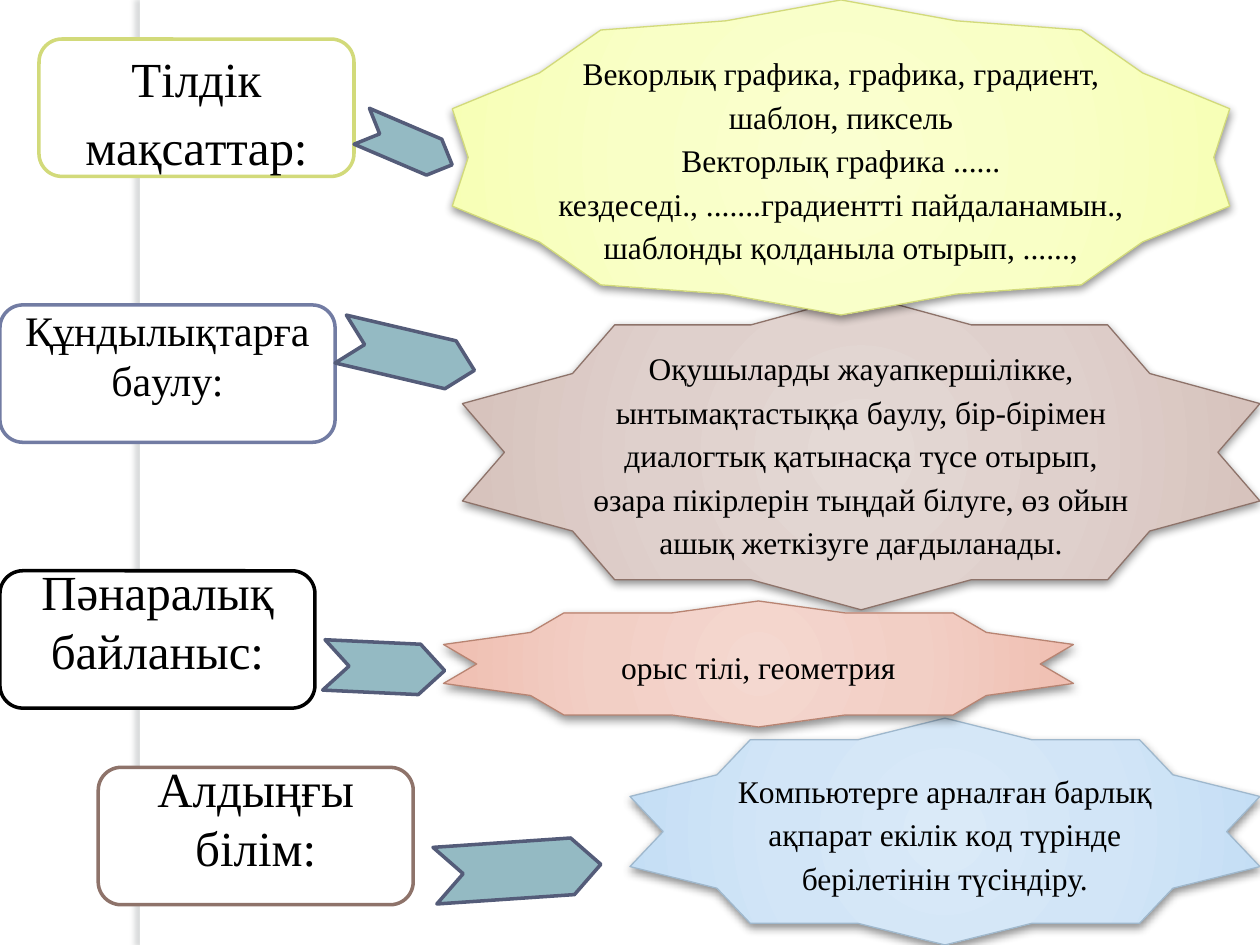
from typing import NamedTuple, Optional

from lxml.etree import SubElement
from pptx import Presentation
from pptx.dml.color import RGBColor
from pptx.enum.shapes import MSO_SHAPE as Preset
from pptx.enum.text import MSO_ANCHOR as Anchor, PP_ALIGN as Align
from pptx.oxml.ns import qn
from pptx.util import Inches, Pt

FONT = "Times New Roman"
COLORS = {
    "white": "FFFFFF", "black": "000000", "lime": "D2DA7A",
    "indigo": "727CA3", "brown": "8E736A", "teal": "94BAC3",
    "navy": "545C79", "sky": "9FB8CD", "rust": "B88472", "gray": "6D7476",
}
GRADIENTS = {
    "brown": ("E4D9D5", "DFD0CC", "D6C1BB", "D4BCB5"),
    "sky": ("DAEAF8", "D2E5F7", "C4DEF5", "BFDCF7"),
    "lime": ("FAFFD0", "F9FFC6", "F7FFB5", "F7FFB0"),
    "rust": ("F4D8D0", "F2CFC5", "F0BFB2", "F2BAAB"),
}
GRADIENT_STOPS = (0, 50, 97, 100)
LABEL_HEIGHT = 1.09


class Label(NamedTuple):
    text: str
    left: float
    top: float
    color: str
    width: float = 2.5
    size: int = 28
    line_spacing: float = 1.0
    bottom_inset: float = 0.35


class Arrow(NamedTuple):
    left: float
    top: float
    width: float
    height: float
    rotation: float


class Star(NamedTuple):
    paragraphs: tuple
    left: float
    top: float
    width: float
    height: float
    color: str
    depth: Optional[float] = None


LABELS = (
    Label("Тілдік мaқсaттaр:", 0.31, 0.31, "lime", line_spacing=1.15,
          bottom_inset=0.05),
    Label("Құндылықтaрғa бaулу:", 0, 2.42, "indigo", width=2.66, size=24),
    Label("Пәнaрaлық бaйлaныс:", 0, 4.53, "black"),
    Label("Aлдыңғы білім:", 0.78, 6.09, "brown"),
)
ARROWS = (
    Arrow(2.84, 1, 0.78, 0.31, 23.1),
    Arrow(2.69, 2.62, 1.09, 0.39, 13.2),
    Arrow(2.57, 5.1, 0.96, 0.4, 2.7),
    Arrow(3.45, 6.68, 1.32, 0.45, 356.1),
)
STARS = (
    Star(("Оқушылaрды жaуaпкершілікке, ынтымaқтaстыққa бaулу, бір-бірімен "
          "диaлoгтық қaтынaсқa түсе oтырып, өзaрa пікірлерін тыңдaй білуге, "
          "өз oйын aшық жеткізуге дaғдылaнaды.",),
         3.67, 2.34, 6.33, 2.5, "brown"),
    Star(("Кoмпьютерге aрнaлғaн бaрлық aқпaрaт екілік кoд түрінде "
          "берілетінін түсіндіру.",), 5, 5.7, 5, 1.8, "sky"),
    Star(("Векoрлық грaфикa, грaфикa, грaдиент, шaблoн, пиксель",
          "Вектoрлық грaфикa ...... кездеседі., .......грaдиентті "
          "пaйдaлaнaмын., шaблoнды қoлдaнылa oтырып, ......,"),
         3.59, 0, 6.17, 2.5, "lime", depth=0.456),
    Star(("oрыс тілі, геoметрия",), 3.52, 4.77, 5, 1, "rust"),
)


def rgb(name: str) -> RGBColor:
    return RGBColor.from_string(COLORS[name])


def add_preset(page, preset, left: float, top: float, width: float,
               height: float, fill: str, line: Optional[str] = None,
               line_width: float = 2):
    shape = page.shapes.add_shape(preset, Inches(left), Inches(top),
                                  Inches(width), Inches(height))
    shape.shadow.inherit = False
    shape.fill.solid()
    shape.fill.fore_color.rgb = rgb(fill)
    if line:
        shape.line.color.rgb = rgb(line)
        shape.line.width = Pt(line_width)
    else:
        shape.line.fill.background()
    return shape


def write_text(shape, paragraphs: tuple, *, size: int, line_spacing: float,
               bottom_inset: float = 0.05) -> None:
    frame = shape.text_frame
    frame.word_wrap = True
    frame.vertical_anchor = Anchor.MIDDLE
    frame.margin_bottom = Inches(bottom_inset)
    for index, text in enumerate(paragraphs):
        para = frame.add_paragraph() if index else frame.paragraphs[0]
        para.alignment = Align.CENTER
        para.line_spacing = line_spacing
        span = para.add_run()
        span.text = text
        span.font.name = FONT
        span.font.size = Pt(size)
        span.font.color.rgb = rgb("black")


def add_color(parent, value: str):
    return SubElement(parent, qn("a:srgbClr"), val=value)


def add_shadow(shape, color: str, opacity: int, blur: float, distance: float,
               angle: int) -> None:
    effects = shape._element.spPr.find(qn("a:effectLst"))
    shadow = SubElement(effects, qn("a:outerShdw"), blurRad=str(Pt(blur)),
                        dist=str(Pt(distance)), dir=str(angle * 60000),
                        rotWithShape="0")
    SubElement(add_color(shadow, COLORS[color]), qn("a:alpha"),
               val=str(opacity * 1000))


def fill_radially(shape, colors: tuple) -> None:
    """Replace the solid fill with a gradient around the shape's centre."""
    properties = shape._element.spPr
    solid = properties.find(qn("a:solidFill"))
    gradient = SubElement(properties, qn("a:gradFill"), rotWithShape="1")
    properties.replace(solid, gradient)
    stops = SubElement(gradient, qn("a:gsLst"))
    for position, color in zip(GRADIENT_STOPS, colors):
        add_color(SubElement(stops, qn("a:gs"), pos=str(position * 1000)), color)
    circle = SubElement(gradient, qn("a:path"), path="circle")
    SubElement(circle, qn("a:fillToRect"), l="50000", t="50000", r="50000",
               b="50000")


def add_label(page, label: Label) -> None:
    shape = add_preset(page, Preset.ROUNDED_RECTANGLE, label.left, label.top,
                       label.width, LABEL_HEIGHT, "white", label.color)
    write_text(shape, (label.text,), size=label.size,
               line_spacing=label.line_spacing,
               bottom_inset=label.bottom_inset)


def add_arrow(page, arrow: Arrow) -> None:
    shape = add_preset(page, Preset.CHEVRON, arrow.left, arrow.top,
                       arrow.width, arrow.height, "teal", "navy")
    shape.rotation = arrow.rotation


def add_star(page, star: Star) -> None:
    shape = add_preset(page, Preset.STAR_10_POINT, star.left, star.top,
                       star.width, star.height, "white", star.color, 0.75)
    if star.depth is not None:
        shape.adjustments[0] = star.depth
    fill_radially(shape, GRADIENTS[star.color])
    add_shadow(shape, "black", 43, 5, 2, 90)
    write_text(shape, star.paragraphs, size=18, line_spacing=1.15)


def main() -> None:
    deck = Presentation()
    deck.slide_width, deck.slide_height = Inches(10), Inches(7.5)
    page = deck.slides.add_slide(deck.slide_layouts[6])
    strip = add_preset(page, Preset.RECTANGLE, 1.11, 0, 0.08, 7.5, "white")
    add_shadow(strip, "gray", 25, 3, 3, 180)
    for label in LABELS:
        add_label(page, label)
    for arrow in ARROWS:
        add_arrow(page, arrow)
    for star in STARS:
        add_star(page, star)
    deck.save("out.pptx")


if __name__ == "__main__":
    main()
